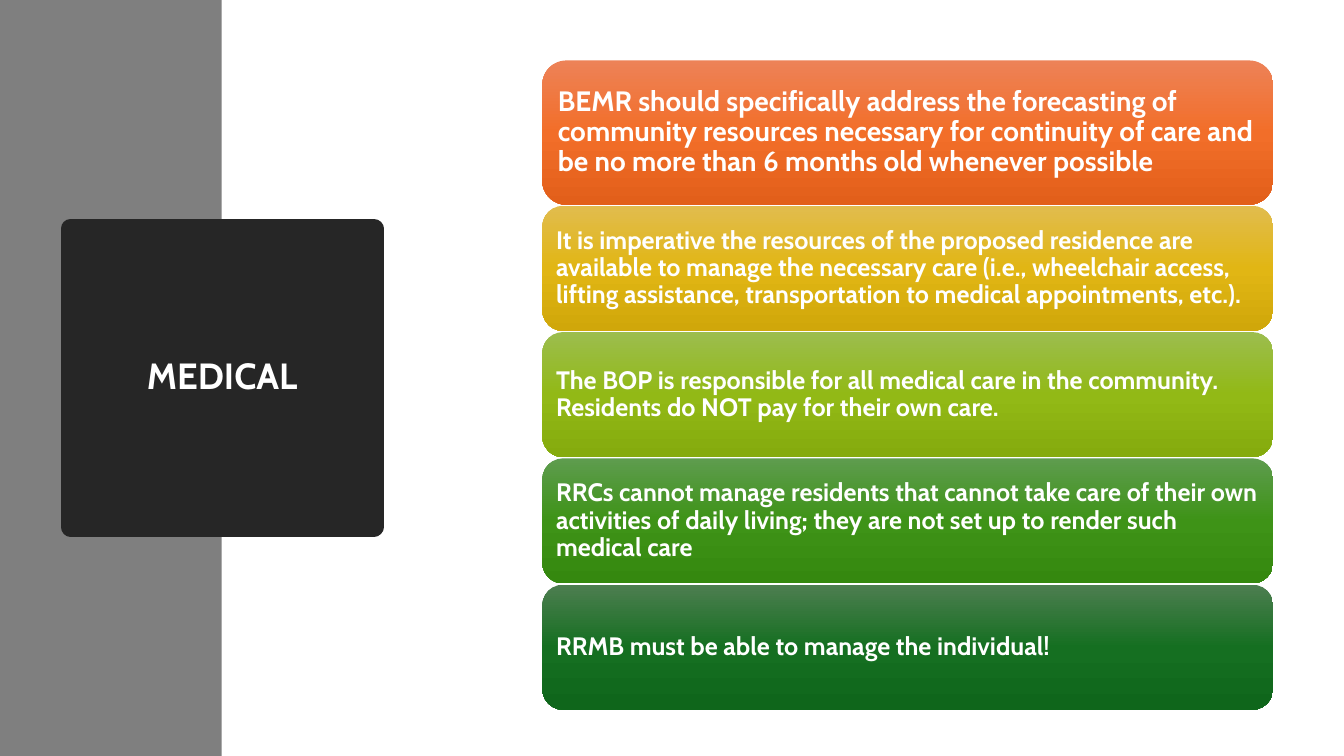
from copy import deepcopy
from dataclasses import dataclass

from lxml.etree import SubElement
from pptx import Presentation
from pptx.dml.color import RGBColor
from pptx.enum.shapes import MSO_SHAPE
from pptx.enum.text import MSO_ANCHOR, PP_ALIGN
from pptx.oxml.ns import qn
from pptx.shapes.autoshape import Shape
from pptx.slide import Slide
from pptx.util import Pt

FONT = "Cabin"
COLORS = {"sidebar": "7F7F7F", "title": "262626", "text": "FFFFFF"}

PANEL_LEFT, PANEL_TOP, PANEL_WIDTH, PANEL_GAP = 387.4, 43.2, 522, 0.8


@dataclass
class Panel:
    text: str
    gradient: tuple[str, str, str]
    height: float = 89.4
    size: float = 18


PANELS = [
    Panel("BEMR should specifically address the forecasting of community resources "
          "necessary for continuity of care and be no more than 6 months old "
          "whenever possible", ("ED8257", "F26E29", "E25F1A"), height=103, size=20),
    Panel("It is imperative the resources of the proposed residence are available to "
          "manage the necessary care (i.e., wheelchair access, lifting assistance, "
          "transportation to medical appointments, etc.).",
          ("E1BC4E", "E1B614", "D0A70A")),
    Panel("The BOP is responsible for all medical care in the community. "
          "Residents do NOT pay for their own care.", ("9CBD4E", "92B916", "85AB0D")),
    Panel("RRCs cannot manage residents that cannot take care of their own activities "
          "of daily living; they are not set up to render such medical care",
          ("5E9C4E", "3E9317", "35880F")),
    Panel("RRMB must be able to manage the individual!", ("4D7E50", "156F21", "0F661B")),
]


def add_box(slide: Slide, kind: MSO_SHAPE, left: float, top: float,
            width: float, height: float) -> Shape:
    """Add a preset shape without shadow or outline."""
    shape = slide.shapes.add_shape(kind, Pt(left), Pt(top), Pt(width), Pt(height))
    shape.shadow.inherit = False
    shape.line.fill.background()
    return shape


def fill_solid(shape: Shape, color: str) -> None:
    shape.fill.solid()
    shape.fill.fore_color.rgb = RGBColor.from_string(color)


def fill_gradient(shape: Shape, colors: tuple[str, str, str]) -> None:
    """Fill from top to bottom with three evenly spaced stops."""
    shape.fill.gradient()
    shape.fill.gradient_angle = 270
    stop_list = next(shape.element.iter(qn("a:gsLst")))
    stop_list.append(deepcopy(stop_list[-1]))
    for index, (stop, color) in enumerate(zip(shape.fill.gradient_stops, colors)):
        stop.position = index / 2
        stop.color.rgb = RGBColor.from_string(color)


def write_text(shape: Shape, text: str, *, size: float, inset: float,
               align: PP_ALIGN = PP_ALIGN.LEFT) -> None:
    frame = shape.text_frame
    frame.word_wrap = True
    frame.vertical_anchor = MSO_ANCHOR.MIDDLE
    frame.margin_left = frame.margin_right = Pt(inset)
    frame.margin_top = frame.margin_bottom = Pt(inset)
    paragraph = frame.paragraphs[0]
    paragraph.alignment = align
    paragraph.line_spacing = 0.9
    run = paragraph.add_run()
    run.text = text
    run.font.name = FONT
    run.font.size = Pt(size)
    run.font.bold = True
    run.font.color.rgb = RGBColor.from_string(COLORS["text"])


def add_title(slide: Slide) -> None:
    """Add the dark square, whose thick outline rounds its corners."""
    title = add_box(slide, MSO_SHAPE.RECTANGLE, 50.4, 163.4, 216.7, 213.1)
    fill_solid(title, COLORS["title"])
    title.line.color.rgb = RGBColor.from_string(COLORS["title"])
    title.line.width = Pt(13.75)
    SubElement(title.element.spPr.find(qn("a:ln")), qn("a:round"))
    write_text(title, "MEDICAL", size=26, inset=7.2, align=PP_ALIGN.CENTER)


def add_panels(slide: Slide) -> None:
    top = PANEL_TOP
    for panel in PANELS:
        shape = add_box(slide, MSO_SHAPE.ROUNDED_RECTANGLE,
                        PANEL_LEFT, top, PANEL_WIDTH, panel.height)
        fill_gradient(shape, panel.gradient)
        write_text(shape, panel.text, size=panel.size, inset=0.3 * panel.size)
        top += panel.height + PANEL_GAP


def main() -> None:
    presentation = Presentation()
    presentation.slide_width, presentation.slide_height = Pt(960), Pt(540)
    slide = presentation.slides.add_slide(presentation.slide_layouts[6])
    sidebar = add_box(slide, MSO_SHAPE.RECTANGLE, 0, 0, 158.4, 540)
    fill_solid(sidebar, COLORS["sidebar"])
    add_title(slide)
    add_panels(slide)
    presentation.save("out.pptx")


if __name__ == "__main__":
    main()
